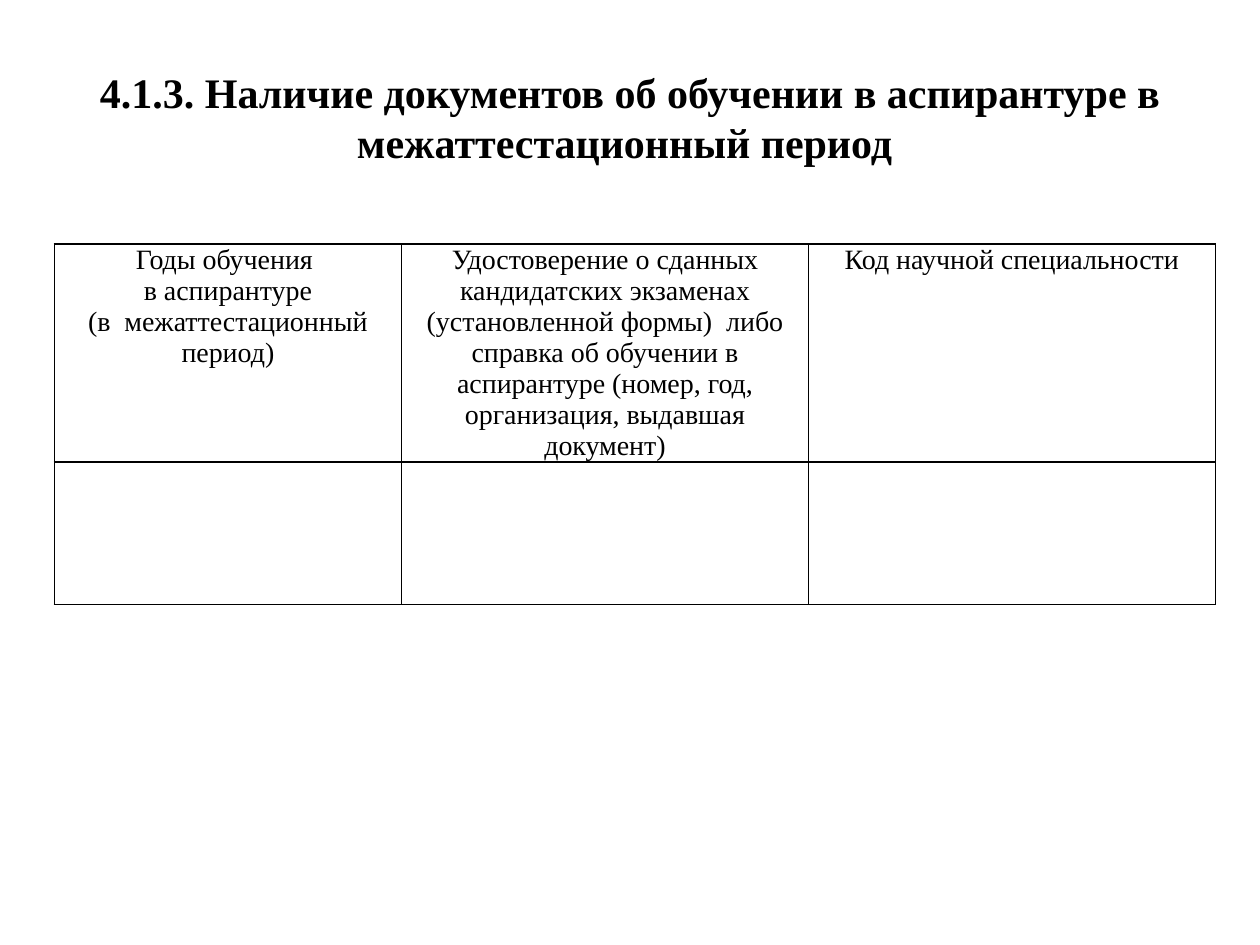
from lxml.etree import SubElement
from pptx import Presentation
from pptx.dml.color import RGBColor
from pptx.enum.text import MSO_ANCHOR, MSO_AUTO_SIZE, PP_ALIGN
from pptx.oxml.ns import qn
from pptx.util import Pt

TITLE = "4.1.3. Наличие документов об обучении в аспирантуре в межаттестационный период "
HEADERS = [
    ["Годы обучения ", "в аспирантуре", "(в  межаттестационный период)"],
    ["Удостоверение о сданных кандидатских экзаменах (установленной формы)  либо справка "
     "об обучении в аспирантуре (номер, год, организация, выдавшая документ)"],
    ["Код научной специальности"],
]
ROWS = [HEADERS, [[], [], []]]
COLUMN_WIDTHS = [198.5, 232.5, 232.5]
ROW_HEIGHTS = [123, 81.5]
TABLE_LEFT, TABLE_TOP = 31, 139.5
COLORS = {"ink": "000000"}
FONT = "Times New Roman"
TITLE_BOX = {"left": Pt(36), "top": Pt(21.6), "width": Pt(648), "height": Pt(90)}
TITLE_FRAME = {"word_wrap": True, "auto_size": MSO_AUTO_SIZE.NONE,
               "vertical_anchor": MSO_ANCHOR.MIDDLE}
CELL_FORMAT = {"margin_left": Pt(5), "margin_right": Pt(5), "margin_top": 0,
               "margin_bottom": 0, "vertical_anchor": MSO_ANCHOR.TOP}


def apply_format(target, values):
    for name, value in values.items():
        setattr(target, name, value)


def write_paragraphs(frame, lines, size, bold):
    for index, line in enumerate(lines):
        paragraph = frame.add_paragraph() if index else frame.paragraphs[0]
        paragraph.alignment = PP_ALIGN.CENTER
        run = paragraph.add_run()
        run.text = line
        apply_format(run.font, {"name": FONT, "size": Pt(size), "bold": bold})
        run.font.color.rgb = RGBColor.from_string(COLORS["ink"])


def add_borders(cell):
    properties = cell._tc.get_or_add_tcPr()
    for position, side in enumerate(("a:lnL", "a:lnR", "a:lnT", "a:lnB")):
        line = SubElement(properties, qn(side), w=str(Pt(1)))
        fill = SubElement(line, qn("a:solidFill"))
        SubElement(fill, qn("a:srgbClr"), val=COLORS["ink"])
        properties.insert(position, line)


def add_title(slide):
    title = slide.shapes.title
    apply_format(title, TITLE_BOX)
    apply_format(title.text_frame, TITLE_FRAME)
    write_paragraphs(title.text_frame, [TITLE], 24, True)


def add_document_table(slide):
    table = slide.shapes.add_table(
        len(ROWS), len(COLUMN_WIDTHS), Pt(TABLE_LEFT), Pt(TABLE_TOP),
        Pt(sum(COLUMN_WIDTHS)), Pt(sum(ROW_HEIGHTS))).table
    apply_format(table, {"first_row": False, "horz_banding": False})
    for column, width in zip(table.columns, COLUMN_WIDTHS):
        column.width = Pt(width)
    for row, height, contents in zip(table.rows, ROW_HEIGHTS, ROWS):
        row.height = Pt(height)
        for cell, lines in zip(row.cells, contents):
            apply_format(cell, CELL_FORMAT)
            cell.fill.background()
            add_borders(cell)
            write_paragraphs(cell.text_frame, lines, 16, False)


def main():
    presentation = Presentation()
    apply_format(presentation, {"slide_width": Pt(720), "slide_height": Pt(540)})
    slide = presentation.slides.add_slide(presentation.slide_layouts[5])
    add_title(slide)
    add_document_table(slide)
    presentation.save("out.pptx")


if __name__ == "__main__":
    main()
